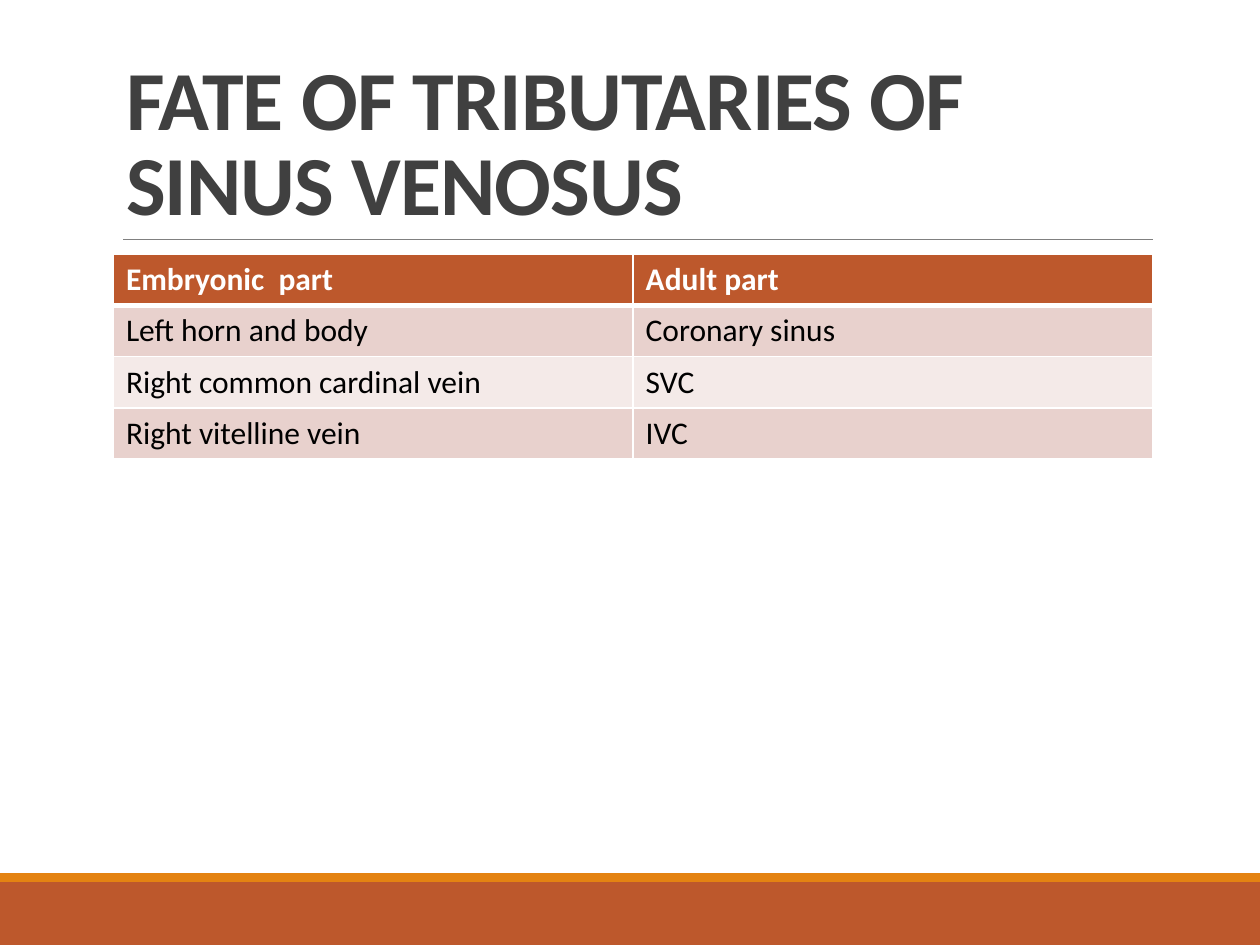
from dataclasses import dataclass

from lxml import etree
from pptx import Presentation
from pptx.dml.color import RGBColor
from pptx.enum.shapes import MSO_CONNECTOR, MSO_SHAPE
from pptx.enum.text import MSO_ANCHOR, MSO_AUTO_SIZE, PP_ALIGN
from pptx.oxml.ns import qn
from pptx.util import Inches, Pt

RECTANGLE = MSO_SHAPE.RECTANGLE
STRAIGHT = MSO_CONNECTOR.STRAIGHT
BOTTOM = MSO_ANCHOR.BOTTOM
LEFT = PP_ALIGN.LEFT
NO_AUTOFIT = MSO_AUTO_SIZE.NONE
TITLE_ONLY = 5

# Content
TITLE = "FATE OF TRIBUTARIES OF SINUS VENOSUS"
ROWS = [
    ("Embryonic  part", "Adult part"),
    ("Left horn and body", "Coronary sinus"),
    ("Right common cardinal vein", "SVC"),
    ("Right vitelline vein", "IVC"),
]


@dataclass(frozen=True)
class Theme:
    font: str = "Calibri"
    title_size: int = 48
    table_size: int = 18
    title: str = "404040"
    rule: str = "808080"
    accent: str = "BD582C"
    stripe: str = "E48312"
    header_text: str = "FFFFFF"
    body_text: str = "000000"
    border: str = "FFFFFF"
    bands: tuple = ("E8D1CD", "F4EAE8")


THEME = Theme()

# Layout, in inches
WIDTH, HEIGHT = 10, 7.5
MARGIN, CONTENT_WIDTH = 0.9, 8.25
RULE_LEFT, RULE_TOP = 0.98, 1.9
TITLE_TOP = 0.31
TABLE_TOP, ROW_HEIGHT = 2.02, 0.405
FOOTER_HEIGHT, STRIPE_HEIGHT = 0.5, 0.07


def style_text(paragraph, size, color, bold):
    for span in paragraph.runs:
        span.font.name = THEME.font
        span.font.size = Pt(size)
        span.font.bold = bold
        span.font.color.rgb = RGBColor.from_string(color)


def add_band(page, top, height, color):
    band = page.shapes.add_shape(
        RECTANGLE, 0, Inches(top), Inches(WIDTH), Inches(height))
    band.shadow.inherit = False
    band.fill.solid()
    band.fill.fore_color.rgb = RGBColor.from_string(color)
    band.line.fill.background()


def add_rule(page):
    y = Inches(RULE_TOP)
    rule = page.shapes.add_connector(
        STRAIGHT, Inches(RULE_LEFT), y, Inches(MARGIN + CONTENT_WIDTH), y)
    rule.line.color.rgb = RGBColor.from_string(THEME.rule)
    rule.line.width = Pt(0.5)
    etree.SubElement(rule._element.spPr, qn("a:effectLst"))


def add_title(page):
    title = page.shapes.title
    title.left, title.top = Inches(MARGIN), Inches(TITLE_TOP)
    title.width, title.height = Inches(CONTENT_WIDTH), Inches(RULE_TOP - TITLE_TOP)
    frame = title.text_frame
    frame.text = TITLE
    frame.word_wrap = True
    frame.auto_size = NO_AUTOFIT
    frame.vertical_anchor = BOTTOM
    paragraph = frame.paragraphs[0]
    paragraph.alignment = LEFT
    paragraph.line_spacing = 0.85
    style_text(paragraph, THEME.title_size, THEME.title, True)
    for span in paragraph.runs:
        span.font._element.set("spc", "-50")


def set_borders(cell, widths):
    # Borders come before the fill in the cell properties
    properties = cell._tc.get_or_add_tcPr()
    for side, width in widths.items():
        line = etree.SubElement(properties, qn(f"a:{side}"), w=str(Pt(width)))
        fill = etree.SubElement(line, qn("a:solidFill"))
        etree.SubElement(fill, qn("a:srgbClr"), val=THEME.border)


def add_table(page):
    table = page.shapes.add_table(
        len(ROWS), len(ROWS[0]), Inches(MARGIN), Inches(TABLE_TOP),
        Inches(CONTENT_WIDTH), Inches(ROW_HEIGHT * len(ROWS))).table
    for r, texts in enumerate(ROWS):
        header = r == 0
        color = THEME.header_text if header else THEME.body_text
        fill = THEME.accent if header else THEME.bands[(r - 1) % 2]
        widths = {"lnL": 1, "lnR": 1, "lnT": 3 if r == 1 else 1,
                  "lnB": 3 if header else 1}
        for c, text in enumerate(texts):
            cell = table.cell(r, c)
            set_borders(cell, widths)
            cell.fill.solid()
            cell.fill.fore_color.rgb = RGBColor.from_string(fill)
            cell.text_frame.text = text
            style_text(cell.text_frame.paragraphs[0], THEME.table_size, color, header)


def main():
    deck = Presentation()
    deck.slide_width, deck.slide_height = Inches(WIDTH), Inches(HEIGHT)
    page = deck.slides.add_slide(deck.slide_layouts[TITLE_ONLY])

    # Footer bands and title rule
    footer_top = HEIGHT - FOOTER_HEIGHT
    add_band(page, footer_top, FOOTER_HEIGHT, THEME.accent)
    add_band(page, footer_top - STRIPE_HEIGHT, STRIPE_HEIGHT, THEME.stripe)
    add_rule(page)

    # Title and table
    add_title(page)
    add_table(page)
    deck.save("out.pptx")


if __name__ == "__main__":
    main()
